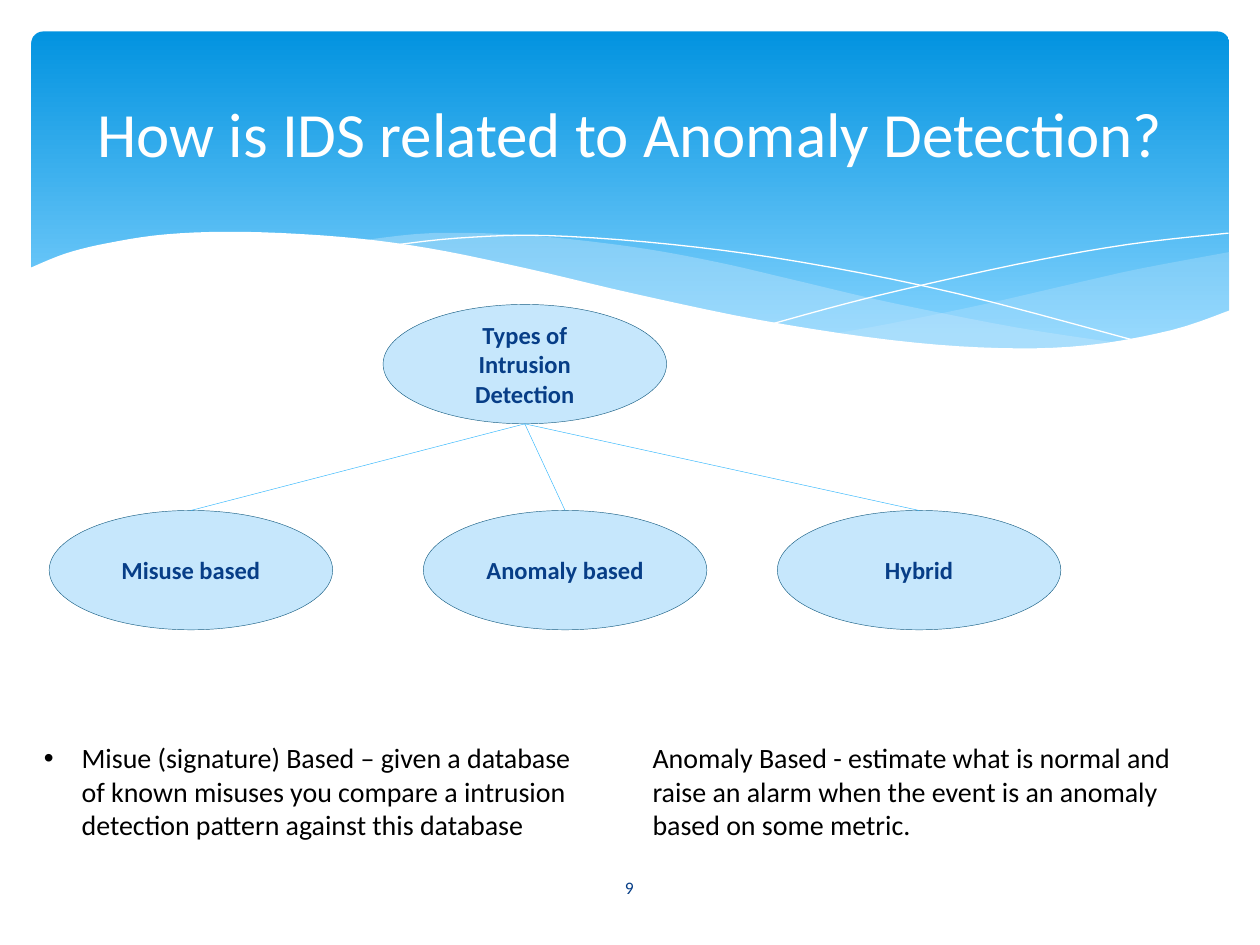
import pptx
import pptx.util
import pptx.dml.color
import pptx.enum.shapes
import pptx.enum.text
import pptx.oxml
import pptx.oxml.ns

Pt = pptx.util.Pt
SHAPE = pptx.enum.shapes.MSO_SHAPE
ALIGN = pptx.enum.text.PP_ALIGN
ANCHOR = pptx.enum.text.MSO_ANCHOR
NAVY, PALE, WHITE, BLACK = "073E87", "C6E7FC", "FFFFFF", "000000"


def paint(color_format, hex_string):
    color_format.rgb = pptx.dml.color.RGBColor.from_string(hex_string)


def write(shape, text, size, color, align=ALIGN.LEFT, anchor=ANCHOR.TOP, bold=False):
    frame = shape.text_frame
    frame.word_wrap = True
    frame.vertical_anchor = anchor
    paragraph = frame.paragraphs[0]
    paragraph.alignment = align
    run = paragraph.add_run()
    run.text = text
    run.font.name = "Calibri"
    run.font.size = Pt(size)
    run.font.bold = bold
    paint(run.font.color, color)
    return paragraph


presentation = pptx.Presentation()
presentation.slide_width = Pt(720)
presentation.slide_height = Pt(540)
slide = presentation.slides.add_slide(presentation.slide_layouts[5])
shapes = slide.shapes

# Gradient banner
banner = shapes.add_shape(SHAPE.ROUNDED_RECTANGLE, Pt(18), Pt(18), Pt(684.5), Pt(194.5))
banner.adjustments[0] = 0.034
banner.shadow.inherit = False
banner.line.fill.background()
banner.fill.gradient()
banner.fill.gradient_angle = 270
for stop, position, color in zip(banner.fill.gradient_stops, (0, 0.9), ("0293E0", "83D3FE")):
    stop.position = position
    paint(stop.color, color)

# Waves: each has its curves, straight corners, fill and opacity in percent
right_wave = [
    [(702.7, 144), (652.3, 153.4), (619.9, 160.6), (560.9, 174.2), (508.3, 185), (475.9, 190.8)],
    [(475.9, 190.8), (517.7, 195.8), (562.3, 199.4), (607.7, 199.4), (640.8, 196.6),
     (673.2, 190.1), (702.7, 177.8)],
]
middle_wave = [
    [(643, 196.6), (581, 187.2), (508.3, 172.8), (452.9, 159.8), (409.7, 149.8),
     (361.4, 141.1), (302.4, 134.6), (247.7, 133.2), (205.9, 137.5)],
    [(205.9, 137.5), (260.6, 146.2), (323.3, 159.8), (407.5, 178.6), (468, 190.1),
     (529.9, 198), (589, 200.2), (643, 196.6)],
]
falling_line = [[(222.5, 140.4), (261.4, 136.1), (311.8, 134.6), (383.8, 139.7),
                 (457.9, 149.8), (547.2, 167.8), (653, 195.8)]]
rising_line = [[(441.4, 185), (500.4, 169.2), (580.3, 151.2), (644.4, 139.7), (702, 133.2)]]
white_wave = [[(703.4, 177.1), (669.6, 188.6), (621.4, 197.3), (571, 198.9), (509.8, 194.4),
               (434.2, 182.9), (362.2, 167.8), (301, 153.4), (244.8, 141.8), (195.1, 135.4),
               (139, 132.5), (95, 133.9), (61.2, 139), (37.4, 144.9), (16.6, 153.4)]]
waves = [
    (right_wave, [], PALE, 29),
    (middle_wave, [], PALE, 40),
    (falling_line, [], None, 100),
    (rising_line, [], None, 100),
    (white_wave, [(16.6, 236.9), (703.4, 236.9)], WHITE, 100),
]
STEPS = 5
for curves, corners, fill, opacity in waves:
    # Catmull-Rom spline through the points of every curve
    outline = []
    for curve in curves:
        padded = [curve[0]] + curve + [curve[-1]]
        for a, b, c, d in zip(padded, padded[1:], padded[2:], padded[3:]):
            for step in range(STEPS):
                t = step / STEPS
                outline.append(tuple(
                    0.5 * (2 * q + (r - p) * t + (2 * p - 5 * q + 4 * r - s) * t ** 2
                           + (3 * q - p - 3 * r + s) * t ** 3)
                    for p, q, r, s in zip(a, b, c, d)))
        outline.append(curve[-1])
    points = [(Pt(x), Pt(y)) for x, y in outline + corners]
    builder = shapes.build_freeform(*points[0])
    builder.add_line_segments(points[1:], close=fill is not None)
    wave = builder.convert_to_shape()
    wave.shadow.inherit = False
    if fill is None:
        wave.fill.background()
        paint(wave.line.color, WHITE)
        wave.line.width = Pt(0)
    else:
        wave.line.fill.background()
        wave.fill.solid()
        paint(wave.fill.fore_color, fill)
        if opacity < 100:
            color_element = wave.fill._xPr.find(".//" + pptx.oxml.ns.qn("a:srgbClr"))
            color_element.append(pptx.oxml.parse_xml(
                f'<a:alpha {pptx.oxml.ns.nsdecls("a")} val="{opacity * 1000}"/>'))

# Title, brought in front of the banner
title = shapes.title
title.left, title.top, title.width, title.height = Pt(36), Pt(26.6), Pt(648), Pt(98.6)
write(title, "How is IDS related to Anomaly Detection?", 36, WHITE, ALIGN.CENTER, ANCHOR.MIDDLE)
shapes.element.append(title.element)

# Tree of detection types
OVAL_WIDTH, OVAL_HEIGHT = 162, 68.2
ovals = []
for label, left, top in [
    ("Types of Intrusion Detection", 218.9, 174),
    ("Misuse based", 28.1, 291.7),
    ("Anomaly based", 241.9, 291.7),
    ("Hybrid", 444.2, 291.7),
]:
    oval = shapes.add_shape(SHAPE.OVAL, Pt(left), Pt(top), Pt(OVAL_WIDTH), Pt(OVAL_HEIGHT))
    oval.shadow.inherit = False
    oval.fill.solid()
    paint(oval.fill.fore_color, PALE)
    paint(oval.line.color, "195F84")
    oval.line.width = Pt(0.25)
    write(oval, label, 14, NAVY, ALIGN.CENTER, ANCHOR.MIDDLE, bold=True)
    ovals.append(oval)

root, *children = ovals
for child in children:
    branch = shapes.add_connector(
        pptx.enum.shapes.MSO_CONNECTOR.STRAIGHT,
        root.left + root.width // 2, root.top + root.height,
        child.left + child.width // 2, child.top)
    paint(branch.line.color, "31B6FD")
    branch.line.width = Pt(0.25)
    branch.element.spPr.append(
        pptx.oxml.parse_xml(f'<a:effectLst {pptx.oxml.ns.nsdecls("a")}/>'))

# Explanations
misuse = shapes.add_textbox(Pt(18), Pt(419.8), Pt(324), Pt(91.4))
paragraph = write(misuse, "Misue (signature) Based – given a database of known misuses you compare "
                  "a intrusion detection pattern against this database", 16, BLACK)
properties = paragraph._p.get_or_add_pPr()
properties.set("marL", str(Pt(21.6)))
properties.set("indent", str(-Pt(21.6)))
properties.append(pptx.oxml.parse_xml(
    f'<a:buFont {pptx.oxml.ns.nsdecls("a")} typeface="Arial"/>'))
properties.append(pptx.oxml.parse_xml(
    f'<a:buChar {pptx.oxml.ns.nsdecls("a")} char="•"/>'))

anomaly = shapes.add_textbox(Pt(365.8), Pt(419.8), Pt(341.3), Pt(91.4))
write(anomaly, "Anomaly Based - estimate what is normal and raise an alarm when the event is "
      "an anomaly based on some metric.", 16, BLACK)

# Page number
page_number = shapes.add_textbox(Pt(313.9), Pt(492.5), Pt(91.4), Pt(28.8))
write(page_number, "9", 10, NAVY, ALIGN.CENTER, ANCHOR.MIDDLE)

presentation.save("out.pptx")
